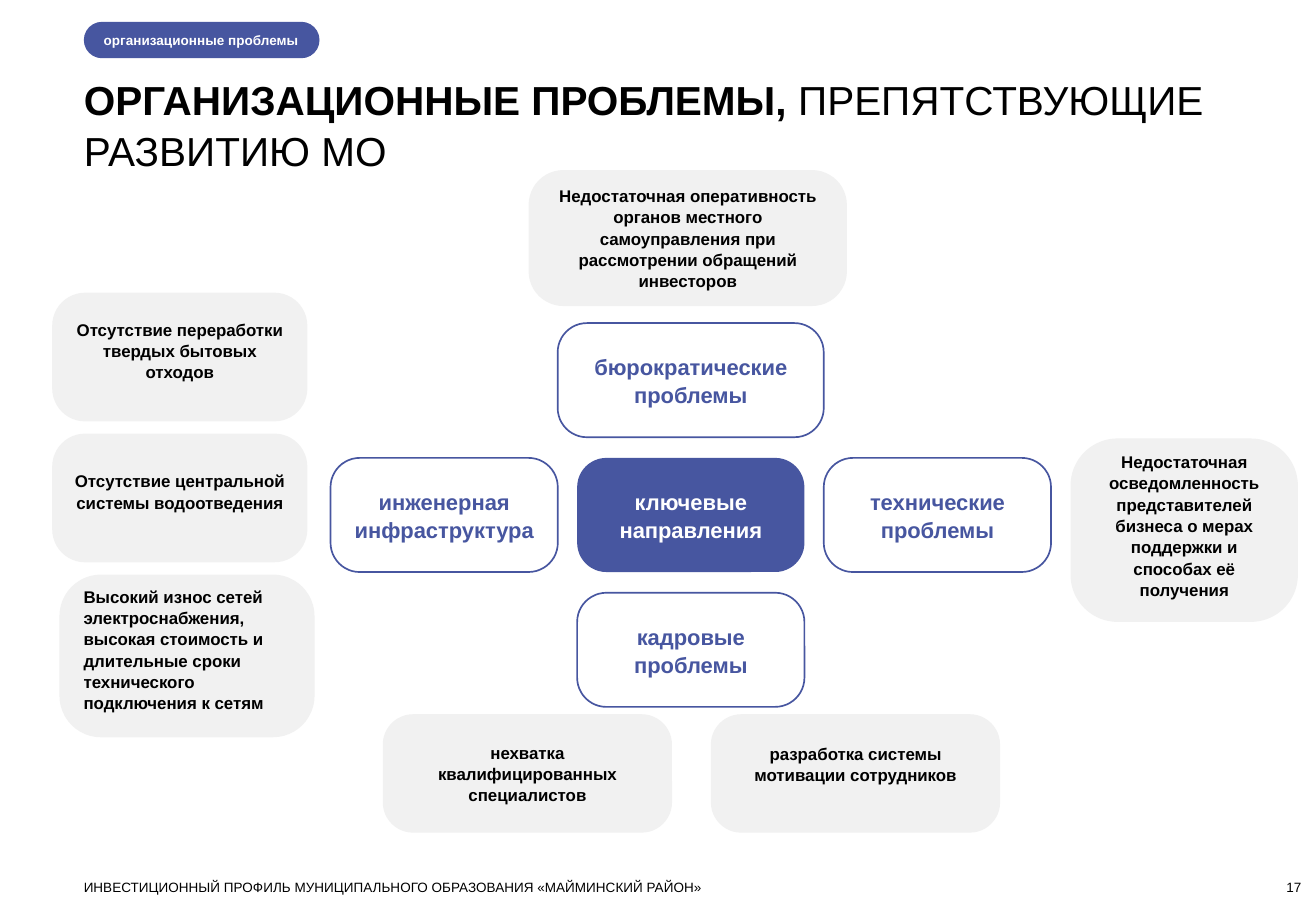
import pptx
import pptx.dml.color
import pptx.enum.shapes
import pptx.enum.text
import pptx.util

ALIGN = pptx.enum.text.PP_ALIGN
ANCHOR = pptx.enum.text.MSO_ANCHOR
BLUE, GRAY, BLACK, WHITE = "4756A0", "F1F1F1", "000000", "FFFFFF"
CARD_WIDTH, CARD_HEIGHT = 17.27, 12.53
CROSS_X, CROSS_Y = 52.49, 56.53
STEP_X, STEP_Y = 18.74, 14.8


def color(value):
    return pptx.dml.color.RGBColor.from_string(value)


class Deck:
    font = "Arial"
    line_spacing = 1.05
    corner = 0.256

    def __init__(self, width, height):
        self.presentation = pptx.Presentation()
        self.presentation.slide_width = pptx.util.Inches(width)
        self.presentation.slide_height = pptx.util.Inches(height)
        self.slide = self.presentation.slides.add_slide(self.presentation.slide_layouts[5])

    def box(self, left, top, width, height):
        horizontal = self.presentation.slide_width / 100
        vertical = self.presentation.slide_height / 100
        return (round(left * horizontal), round(top * vertical),
                round(width * horizontal), round(height * vertical))

    def add_text(self, shape, runs, size, ink, align, anchor, insets):
        frame = shape.text_frame
        frame.word_wrap = True
        frame.auto_size = pptx.enum.text.MSO_AUTO_SIZE.NONE
        frame.vertical_anchor = anchor
        (frame.margin_left, frame.margin_top,
         frame.margin_right, frame.margin_bottom) = map(pptx.util.Inches, insets)
        paragraph = frame.paragraphs[0]
        paragraph.alignment = align
        paragraph.line_spacing = self.line_spacing
        for text, bold in runs:
            run = paragraph.add_run()
            run.text = text
            run.font.name = self.font
            run.font.size = pptx.util.Pt(size)
            run.font.bold = bold
            run.font.color.rgb = color(ink)

    def title(self, box, runs):
        shape = self.slide.shapes.title
        shape.left, shape.top, shape.width, shape.height = self.box(*box)
        self.add_text(shape, runs, 24, BLACK, ALIGN.LEFT, ANCHOR.TOP, (0, 0, 0, 0))

    def label(self, box, text, align=ALIGN.LEFT):
        shape = self.slide.shapes.add_textbox(*self.box(*box))
        self.add_text(shape, [(text, False)], 8, BLACK, align, ANCHOR.TOP, (0, 0, 0, 0))

    def card(self, box, text, size, ink, fill=None, line=None, corner=corner,
             align=ALIGN.CENTER, insets=(0.1, 0.05, 0.1, 0.05)):
        shape = self.slide.shapes.add_shape(
            pptx.enum.shapes.MSO_SHAPE.ROUNDED_RECTANGLE, *self.box(*box))
        shape.shadow.inherit = False
        shape.adjustments[0] = corner
        if fill:
            shape.fill.solid()
            shape.fill.fore_color.rgb = color(fill)
        else:
            shape.fill.background()
        if line:
            shape.line.color.rgb = color(line)
            shape.line.width = pptx.util.Pt(1)
        else:
            shape.line.fill.background()
        self.add_text(shape, [(text, True)], size, ink, align, ANCHOR.MIDDLE, insets)

    def direction(self, column, row, text, width=CARD_WIDTH, ink=BLUE, fill=None, line=BLUE):
        left = CROSS_X + column * STEP_X - width / 2
        top = CROSS_Y + row * STEP_Y - CARD_HEIGHT / 2
        self.card((left, top, width, CARD_HEIGHT), text, 13, ink, fill, line)

    def problem(self, box, text, bottom=0.05, align=ALIGN.CENTER):
        self.card(box, text, 10, BLACK, GRAY, align=align, insets=(0.1, 0.05, 0.1, bottom))


def main():
    deck = Deck(10.83, 7.5)
    deck.title((6.37, 8, 92.52, 10.8),
               [("ОРГАНИЗАЦИОННЫЕ ПРОБЛЕМЫ, ", True), ("ПРЕПЯТСТВУЮЩИЕ РАЗВИТИЮ МО", False)])
    deck.card((6.37, 2.4, 17.91, 4), "организационные проблемы", 8, WHITE, BLUE,
              corner=0.5, align=ALIGN.LEFT, insets=(0.12, 0, 0, 0))

    deck.direction(0, 0, "ключевые направления", ink=WHITE, fill=BLUE, line=None)
    deck.direction(0, -1, "бюрократические проблемы", width=20.22)
    deck.direction(-1, 0, "инженерная инфраструктура")
    deck.direction(1, 0, "технические проблемы")
    deck.direction(0, 1, "кадровые проблемы")

    deck.problem((40.17, 18.67, 24.19, 14.93),
                 "Недостаточная оперативность органов местного самоуправления "
                 "при рассмотрении обращений инвесторов")
    deck.problem((3.97, 32.13, 19.39, 14.13),
                 "Отсутствие переработки твердых бытовых отходов", 0.16)
    deck.problem((3.97, 47.6, 19.39, 14.13),
                 "Отсутствие центральной системы водоотведения", 0.16)
    deck.problem((4.52, 63.07, 19.39, 17.87),
                 "Высокий износ сетей электроснабжения, высокая стоимость и длительные "
                 "сроки технического подключения к сетям", 0.16, ALIGN.LEFT)
    deck.problem((81.35, 48.13, CARD_WIDTH, 20.13),
                 "Недостаточная осведомленность представителей бизнеса о мерах "
                 "поддержки и способах её получения", 0.13)
    deck.problem((29.09, 78.4, 21.98, 13), "нехватка квалифицированных специалистов")
    deck.problem((54.02, 78.4, 21.98, 13), "разработка системы мотивации сотрудников", 0.21)

    deck.label((6.37, 96.4, 73.87, 1.73),
               "ИНВЕСТИЦИОННЫЙ ПРОФИЛЬ МУНИЦИПАЛЬНОГО ОБРАЗОВАНИЯ «МАЙМИНСКИЙ РАЙОН»")
    deck.label((91.51, 96.4, 7.39, 1.73), "17", ALIGN.RIGHT)
    deck.presentation.save("out.pptx")


if __name__ == "__main__":
    main()
